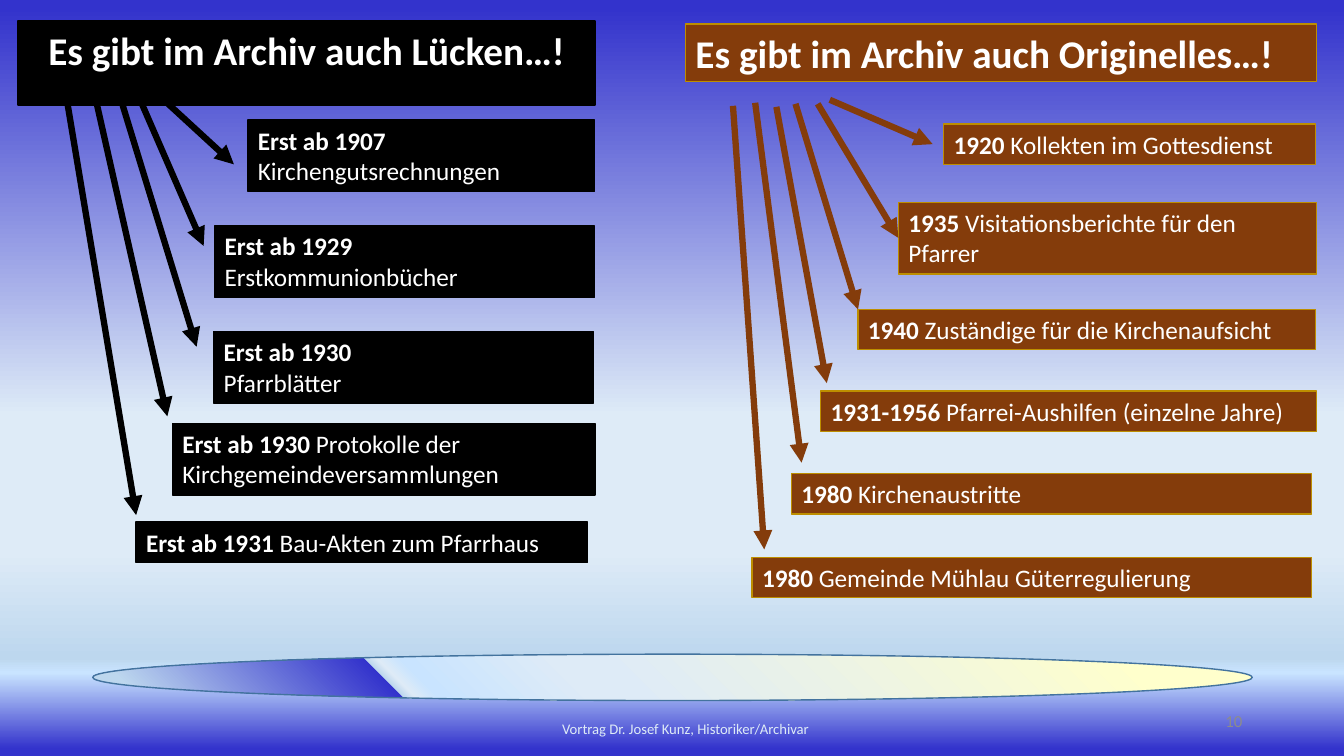
from collections import namedtuple
from dataclasses import dataclass

from lxml import etree
from pptx import Presentation
from pptx import util as u
from pptx.dml.color import RGBColor
from pptx.enum import shapes, text
from pptx.oxml.ns import qn

PX = 9144  # EMU per px, 100 px to the inch


@dataclass(frozen=True)
class Theme:
    font: str = "Calibri"
    heading: float = 28
    body: float = 18
    number: float = 12
    footer: float = 10.5
    light: str = "FFFFFF"
    black: str = "000000"
    brown: str = "843C0B"
    gold: str = "BD8E00"
    footer_ink: str = "DEEBF7"
    number_ink: str = "8C8C8C"
    ellipse_line: str = "43739E"
    sky: tuple = ((1, "3333CC"), (55, "DEEBF7"), (58, "DEEBF7"), (73, "DEEBF7"),
                  (87, "BDD7EE"), (89, "C9E4FF"), (99, "3333CC"))
    sheen: tuple = ((10, "FFFFCC"), (55, "DEEBF7"), (58, "DEEBF7"), (71, "C9E4FF"),
                    (73, "DEEBF7"), (74, "BDD7EE"), (74, "3333CC"), (96, "BDD7EE"))


T = Theme()
Box = namedtuple("Box", "x y w h")
# Places are relative to the column; gap is the distance to its right edge.
Entry = namedtuple("Entry", "x y gap lines year topic start tip")
LINE_HEIGHTS = {1: 40, 2: 71}

GAPS = [
    Entry(228, 98, 0, 2, "Erst ab 1907", "\nKirchengutsrechnungen", (140, 74), (214, 142)),
    Entry(195, 203, 0, 2, "Erst ab 1929", "\nErstkommunionbücher", (121, 78), (184, 223)),
    Entry(194, 308, 1, 2, "Erst ab 1930", "\nPfarrblätter", (102, 78), (177, 323)),
    Entry(153, 399, 0, 2, "Erst ab 1930", " Protokolle der Kirchgemeindeversammlungen",
          (78, 82), (148, 392)),
    Entry(117, 497, 7, 1, "Erst ab 1931", " Bau-Akten zum Pfarrhaus", (49, 82), (117, 490)),
]
CURIOSITIES = [
    Entry(256, 99, 1, 1, "1920", " Kollekten im Gottesdienst", (143, 75), (245, 119)),
    Entry(211, 177, 0, 2, "1935", " Visitationsberichte für den Pfarrer", (131, 79), (211, 212)),
    Entry(171, 283, 1, 1, "1940", " Zuständige für die Kirchenaufsicht", (109, 79), (171, 283)),
    Entry(134, 364, 0, 1, "1931-1956", " Pfarrei-Aushilfen (einzelne Jahre)", (90, 82), (140, 356)),
    Entry(105, 446, 5, 1, "1980", " Kirchenaustritte", (69, 78), (115, 435)),
    Entry(66, 529, 5, 1, "1980", " Gemeinde Mühlau Güterregulierung", (47, 81), (78, 521)),
]


def emu(values):
    return [u.Emu(v * PX) for v in values]


def rgb(value):
    return RGBColor.from_string(value)


def set_gradient(fill, owner, stops, angle):
    """Fill with any number of stops; angle runs clockwise."""
    fill.gradient()
    fill.gradient_angle = 360 - angle
    stop_list = owner.find(".//" + qn("a:gsLst"))
    for stop in list(stop_list):
        stop_list.remove(stop)
    for position, color in stops:
        stop = etree.SubElement(stop_list, qn("a:gs"), pos=str(position * 1000))
        etree.SubElement(stop, qn("a:srgbClr"), val=color)


def style_line(line, color, width):
    line.color.rgb = rgb(color)
    line.width = u.Pt(width)


def style_paragraph(p, size, color, align):
    p.alignment = align
    p.font.name = T.font
    p.font.size = u.Pt(size)
    p.font.color.rgb = rgb(color)


def label(sp, fill, line, size, bold, plain="", align=text.PP_ALIGN.LEFT):
    """Turn a shape into a filled label: bold words, then plain ones."""
    sp.fill.solid()
    sp.fill.fore_color.rgb = rgb(fill)
    style_line(sp.line, line, 1)
    tf = sp.text_frame
    tf.word_wrap = True
    tf.auto_size = text.MSO_AUTO_SIZE.SHAPE_TO_FIT_TEXT
    tf.vertical_anchor = text.MSO_ANCHOR.TOP
    p = tf.paragraphs[0]
    style_paragraph(p, size, T.light, align)
    r = p.add_run()
    r.text = bold
    r.font.bold = True
    if plain.startswith("\n"):
        p.add_line_break()
    if plain:
        r = p.add_run()
        r.text = plain.lstrip("\n")
        r.font.bold = False


def add_shape(slide, kind, box):
    sp = slide.shapes.add_shape(kind, *emu(box))
    sp.shadow.inherit = False
    return sp


def add_arrow(slide, start, tip, color):
    arrow = slide.shapes.add_connector(shapes.MSO_CONNECTOR.STRAIGHT, *emu(start + tip))
    style_line(arrow.line, color, 4.5)
    props = arrow._element.spPr
    etree.SubElement(props.find(qn("a:ln")), qn("a:tailEnd"), type="triangle")
    etree.SubElement(props, qn("a:effectLst"))


def add_column(slide, box, heading, entries, fill, line, title=None):
    """Heading with labelled arrows fanning out; title is a placeholder to use as heading."""
    head_box = Box(box.x, box.y, box.w, 57)
    if title is None:
        head = add_shape(slide, shapes.MSO_SHAPE.RECTANGLE, head_box)
        align = text.PP_ALIGN.LEFT
    else:
        head = title
        head.left, head.top, head.width, head.height = emu(head_box)
        align = text.PP_ALIGN.CENTER
    label(head, fill, line, T.heading, heading, align=align)
    for e in entries:
        place = Box(box.x + e.x, box.y + e.y, box.w - e.x - e.gap, LINE_HEIGHTS[e.lines])
        sp = add_shape(slide, shapes.MSO_SHAPE.RECTANGLE, place)
        label(sp, fill, line, T.body, e.year, e.topic)
    for e in entries:
        start, tip = ((box.x + x, box.y + y) for x, y in (e.start, e.tip))
        add_arrow(slide, start, tip, fill)


def add_note(slide, box, words, size, color, align):
    tf = slide.shapes.add_textbox(*emu(box)).text_frame
    tf.word_wrap = True
    tf.vertical_anchor = text.MSO_ANCHOR.MIDDLE
    p = tf.paragraphs[0]
    p.text = words
    style_paragraph(p, size, color, align)


def add_foot(slide, box):
    """Decorative ellipse, footer line and slide number."""
    ellipse = add_shape(slide, shapes.MSO_SHAPE.OVAL, Box(box.x, box.y, box.w, 46))
    set_gradient(ellipse.fill, ellipse._element, T.sheen, 135)
    style_line(ellipse.line, T.ellipse_line, 1)
    add_note(slide, Box(box.x + 343, box.y + 61, 490, 26),
             "Vortrag Dr. Josef Kunz, Historiker/Archivar",
             T.footer, T.footer_ink, text.PP_ALIGN.CENTER)
    add_note(slide, Box(box.x + box.w - 300, box.y + 46, 300, 40), "10",
             T.number, T.number_ink, text.PP_ALIGN.RIGHT)


def main():
    prs = Presentation()
    prs.slide_width, prs.slide_height = emu((1333, 750))
    slide = prs.slides.add_slide(prs.slide_layouts.get_by_name("Title Only"))
    set_gradient(slide.background.fill, slide._element, T.sky, 90)
    add_foot(slide, Box(92, 649, 1150, 87))
    add_column(slide, Box(18, 21, 572, 537), "Es gibt im Archiv auch Lücken…!",
               GAPS, T.black, T.black, slide.shapes.title)
    add_column(slide, Box(680, 24, 626, 569), "Es gibt im Archiv auch Originelles…!",
               CURIOSITIES, T.brown, T.gold)
    prs.save("out.pptx")


if __name__ == "__main__":
    main()
